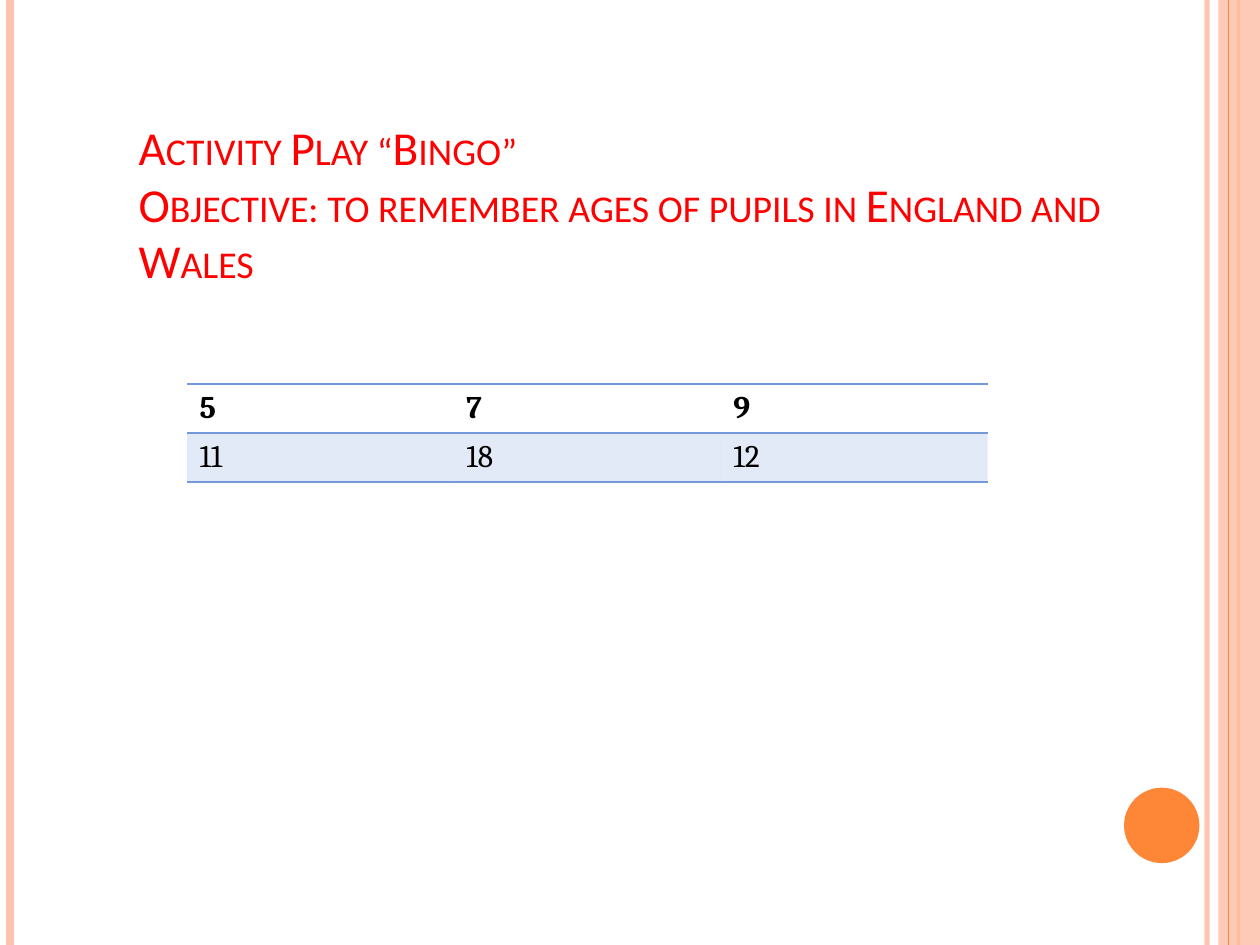
from dataclasses import dataclass
from typing import Optional

from lxml.etree import SubElement
from pptx import Presentation
from pptx.dml.color import RGBColor
from pptx.enum.shapes import MSO_CONNECTOR, MSO_SHAPE
from pptx.enum.text import MSO_ANCHOR, MSO_AUTO_SIZE, PP_ALIGN
from pptx.oxml.ns import qn
from pptx.util import Cm, Pt

PAGE_WIDTH, PAGE_HEIGHT = 25.4, 19.05
PEACH, ORANGE, BLUE = "FEC3AE", "FE8637", "7598D9"
TITLE = "Activity Play “Bingo”\nObjective: to remember ages of pupils in England and Wales"
BINGO_ROWS = (("5", "7", "9"), ("11", "18", "12"))
COLUMN_WIDTH, ROW_HEIGHT = 5.38, 0.99


@dataclass(frozen=True)
class Stripe:
    x: float
    color: str
    width: float
    opacity: int = 100


@dataclass(frozen=True)
class Panel:
    preset: MSO_SHAPE
    left: float
    top: float
    width: float
    height: float
    color: str
    opacity: int = 100


DECORATIONS = (
    Stripe(24.33, PEACH, 3, 93),
    Stripe(0.2, PEACH, 4.5),
    Stripe(24.97, ORANGE, 1.5),
    Panel(MSO_SHAPE.RECTANGLE, 24.56, 0, 0.84, PAGE_HEIGHT, PEACH, 87),
    Stripe(24.76, ORANGE, 0.75),
    Panel(MSO_SHAPE.OVAL, 22.66, 15.88, 1.52, 1.52, ORANGE),
)


def rgb(color: str) -> RGBColor:
    return RGBColor.from_string(color)


def paint(fill, color: str, opacity: int = 100) -> None:
    fill.solid()
    fill.fore_color.rgb = rgb(color)
    if opacity < 100:
        tone = fill._xPr.find(qn("a:solidFill"))[0]
        SubElement(tone, qn("a:alpha"), val=str(opacity * 1000))


def draw_stripe(page, stripe: Stripe) -> None:
    line = page.shapes.add_connector(
        MSO_CONNECTOR.STRAIGHT, Cm(stripe.x), 0, Cm(stripe.x), Cm(PAGE_HEIGHT))
    line.line.width = Pt(stripe.width)
    paint(line.line.fill, stripe.color, stripe.opacity)
    SubElement(line._element.spPr, qn("a:effectLst"))


def draw_panel(page, panel: Panel) -> None:
    shape = page.shapes.add_shape(
        panel.preset, Cm(panel.left), Cm(panel.top), Cm(panel.width), Cm(panel.height))
    shape.shadow.inherit = False
    shape.line.fill.background()
    paint(shape.fill, panel.color, panel.opacity)


def write_title(page) -> None:
    title = page.shapes.title
    title.left, title.top, title.width, title.height = Cm(2.54), Cm(0.76), Cm(21.59), Cm(5.18)
    frame = title.text_frame
    frame.text = TITLE
    frame.word_wrap = True
    frame.auto_size = MSO_AUTO_SIZE.NONE
    frame.vertical_anchor = MSO_ANCHOR.BOTTOM
    for para in frame.paragraphs:
        para.alignment = PP_ALIGN.LEFT
        for span in para.runs:
            span.font.name = "Calibri"
            span.font.size = Pt(27)
            span.font.color.rgb = rgb("FF0000")
            span.font._element.set("cap", "small")


def set_borders(cell, colors: dict[str, Optional[str]]) -> None:
    properties = cell._tc.get_or_add_tcPr()
    for position, (side, color) in enumerate(colors.items()):
        border = properties.makeelement(qn(f"a:{side}"), {"w": str(Pt(1))})
        properties.insert(position, border)
        if color:
            SubElement(SubElement(border, qn("a:solidFill")), qn("a:srgbClr"), val=color)
        else:
            SubElement(border, qn("a:noFill"))


def draw_bingo(page) -> None:
    row_count, column_count = len(BINGO_ROWS), len(BINGO_ROWS[0])
    table = page.shapes.add_table(
        row_count, column_count, Cm(3.77), Cm(7.74),
        Cm(COLUMN_WIDTH * column_count), Cm(ROW_HEIGHT * row_count)).table
    for row_index, values in enumerate(BINGO_ROWS):
        for column_index, value in enumerate(values):
            cell = table.cell(row_index, column_index)
            cell.text = value
            if row_index == 0:
                cell.fill.background()
            else:
                paint(cell.fill, BLUE, 20)
            set_borders(cell, {"lnL": None, "lnR": None, "lnT": BLUE, "lnB": BLUE})
            font = cell.text_frame.paragraphs[0].runs[0].font
            font.name = "Cambria"
            font.size = Pt(18)
            font.bold = row_index == 0
            font.color.rgb = rgb("000000")


def main() -> None:
    deck = Presentation()
    deck.slide_width, deck.slide_height = Cm(PAGE_WIDTH), Cm(PAGE_HEIGHT)
    page = deck.slides.add_slide(deck.slide_layouts.get_by_name("Title Only"))
    paint(page.background.fill, "FFFFFF")
    for item in DECORATIONS:
        if isinstance(item, Stripe):
            draw_stripe(page, item)
        else:
            draw_panel(page, item)
    write_title(page)
    draw_bingo(page)
    deck.save("out.pptx")


if __name__ == "__main__":
    main()
